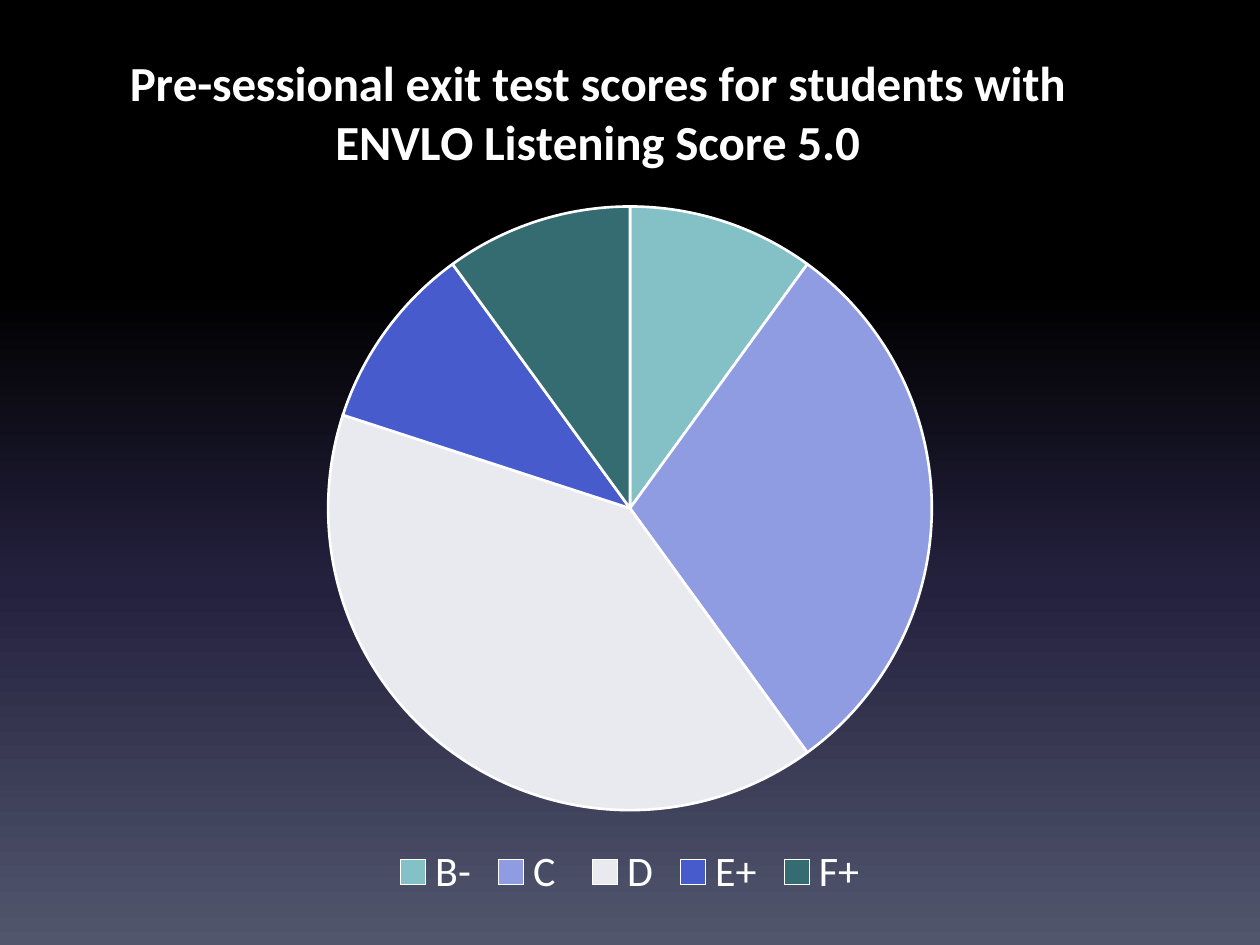
from copy import deepcopy

from lxml import etree
from pptx import Presentation
from pptx import util as u
from pptx.chart.data import CategoryChartData
from pptx.dml.color import RGBColor
from pptx.enum import chart as c, text
from pptx.oxml import ns

Pt = u.Pt
COLORS = {
    "text": "FFFFFF",
    "B-": "83C1C6",
    "C ": "909CE1",
    "D": "E9EAF0",
    "E+": "475BCD",
    "F+": "346C71",
}
BACKGROUND_STOPS = [(0, "000000"), (0.31, "000000"), (0.62, "24213E"), (1, "51566D")]
SCORES = {"B-": 10, "C ": 30, "D": 40, "E+": 10, "F+": 10}
TITLE_LINES = ["Pre-sessional exit test scores for students with",
               "ENVLO Listening Score 5.0"]


def format_font(font, size, bold=False):
    for name, value in {"name": "Calibri", "size": Pt(size), "bold": bold}.items():
        setattr(font, name, value)
    font.color.rgb = RGBColor.from_string(COLORS["text"])


def set_layout(parent, values):
    """Place a chart part by hand, in fractions of the chart's size."""
    layout = parent.find(ns.qn("c:layout"))
    if layout is None:
        layout = etree.Element(ns.qn("c:layout"))
        before = parent.find(ns.qn("c:tx"))
        parent.insert(0 if before is None else parent.index(before) + 1, layout)
    manual = etree.SubElement(layout, ns.qn("c:manualLayout"))
    for name, value in values.items():
        etree.SubElement(manual, ns.qn(f"c:{name}")).set("val", str(value))


presentation = Presentation()
presentation.slide_width, presentation.slide_height = Pt(720), Pt(540)
slide = presentation.slides.add_slide(presentation.slide_layouts[6])

# Background
background = slide.background.fill
background.gradient()
background.gradient_angle = 270
stop_list = slide.element.find(".//" + ns.qn("a:gsLst"))
while len(stop_list) < len(BACKGROUND_STOPS):
    stop_list.append(deepcopy(stop_list[0]))
for stop, (position, color) in zip(background.gradient_stops, BACKGROUND_STOPS):
    stop.position = position
    stop.color.rgb = RGBColor.from_string(color)

# Pie chart
data = CategoryChartData()
data.categories = list(SCORES)
data.add_series("Series 1", list(SCORES.values()))
chart = slide.shapes.add_chart(
    c.XL_CHART_TYPE.PIE, Pt(0), Pt(18), Pt(720), Pt(500), data).chart
format_font(chart.font, 10)
plot = chart.plots[0]
plot.vary_by_categories = True
for index, category in enumerate(SCORES):
    slice_format = plot.series[0].points[index].format
    slice_format.fill.solid()
    slice_format.fill.fore_color.rgb = RGBColor.from_string(COLORS[category])
    slice_format.line.width = Pt(1.5)
    slice_format.line.color.rgb = RGBColor.from_string(COLORS["text"])

# Chart title
chart.has_title = True
title = chart.chart_title
title.include_in_layout = False
frame = title.text_frame
frame.text = "\n".join(TITLE_LINES)
for paragraph in frame.paragraphs:
    paragraph.alignment = text.PP_ALIGN.CENTER
    format_font(paragraph.font, 28, bold=True)
    for run in paragraph.runs:
        format_font(run.font, 28, bold=True)

# Legend
chart.has_legend = True
chart.legend.position = c.XL_LEGEND_POSITION.BOTTOM
chart.legend.include_in_layout = False
format_font(chart.legend.font, 24)

title_element = chart.element.find(".//" + ns.qn("c:title"))
plot_area = chart.element.find(".//" + ns.qn("c:plotArea"))
set_layout(title_element, {"xMode": "edge", "yMode": "edge", "x": 0.1, "y": 0.02})
set_layout(plot_area, {"layoutTarget": "inner", "xMode": "edge", "yMode": "edge",
                       "x": 0.26, "y": 0.2, "w": 0.48, "h": 0.69})

presentation.save("out.pptx")
